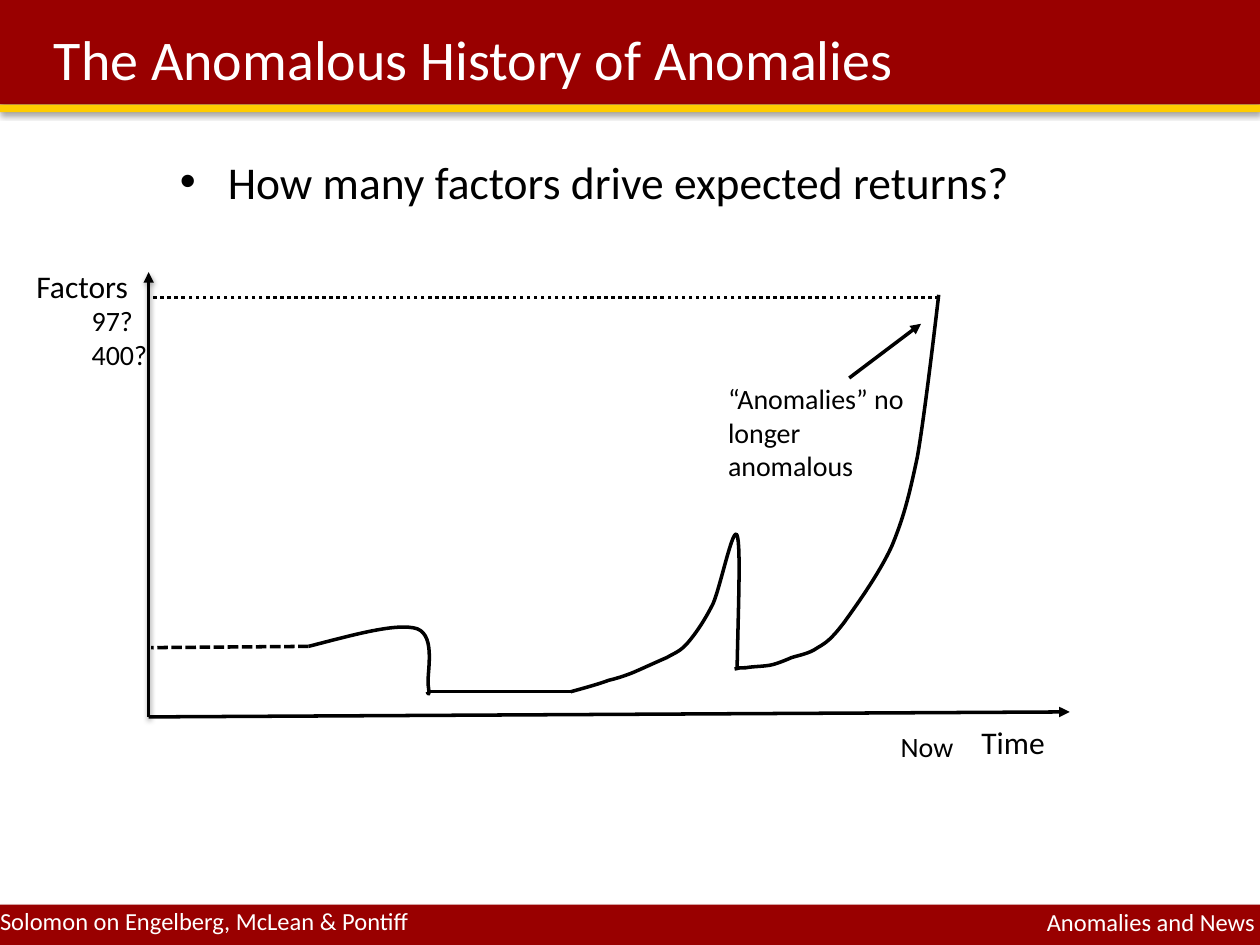
from lxml.etree import SubElement
from pptx import Presentation
from pptx.dml.color import RGBColor
from pptx.enum.dml import MSO_LINE
from pptx.enum.shapes import MSO_CONNECTOR, MSO_SHAPE
from pptx.enum.text import MSO_ANCHOR, PP_ALIGN
from pptx.oxml.ns import qn
from pptx.util import Inches, Pt

COLORS = {"red": "990000", "gold": "FFCC00", "black": "000000", "white": "FFFFFF"}

deck = Presentation()
deck.slide_width = Inches(10)
deck.slide_height = Inches(7.5)
page = deck.slides.add_slide(deck.slide_layouts[6])


def add_text(text, left, top, width, height, size=16, color="black",
             align=PP_ALIGN.LEFT, anchor=MSO_ANCHOR.TOP, inset=None, bullet=False):
    box = page.shapes.add_textbox(Inches(left), Inches(top), Inches(width), Inches(height))
    frame = box.text_frame
    frame.word_wrap = True
    frame.vertical_anchor = anchor
    if inset is not None:
        frame.margin_left = frame.margin_right = Inches(inset)
        frame.margin_top = frame.margin_bottom = Inches(inset)
    para = frame.paragraphs[0]
    para.text = text
    para.alignment = align
    if bullet:
        properties = para._p.get_or_add_pPr()
        properties.set("marL", str(Inches(0.38)))
        properties.set("indent", str(Inches(-0.38)))
        SubElement(properties, qn("a:buFont"), typeface="Arial")
        SubElement(properties, qn("a:buChar"), char="•")
    for span in para.runs:
        span.font.name = "Calibri"
        span.font.size = Pt(size)
        span.font.color.rgb = RGBColor.from_string(COLORS[color])


def set_shadow(shape, opacity=0, distance=0):
    effects = SubElement(shape._element.spPr, qn("a:effectLst"))
    if opacity:
        shadow = SubElement(effects, qn("a:outerShdw"), blurRad=str(Pt(3.1)),
                            dist=str(Pt(distance)), dir="5400000", rotWithShape="0")
        tint = SubElement(shadow, qn("a:srgbClr"), val=COLORS["black"])
        SubElement(tint, qn("a:alpha"), val=str(opacity * 1000))


bands = [
    (7.18, 0.32, "red", 35, 1.8),
    (0, 0.83, "red", 35, 1.8),
    (0.83, 0.06, "gold", 38, 1.6),
]
for top, height, color, opacity, distance in bands:
    band = page.shapes.add_shape(
        MSO_SHAPE.RECTANGLE, 0, Inches(top), deck.slide_width, Inches(height))
    band.fill.solid()
    band.fill.fore_color.rgb = RGBColor.from_string(COLORS[color])
    band.line.fill.background()
    set_shadow(band, opacity, distance)

add_text("Solomon on Engelberg, McLean & Pontiff", 0, 7.19, 3.92, 0.24,
         size=14, color="white", inset=0)
add_text("Anomalies and News", 6.69, 7.2, 3.27, 0.24,
         size=14, color="white", align=PP_ALIGN.RIGHT, inset=0)
add_text("The Anomalous History of Anomalies", 0.33, 0.17, 9, 0.58,
         size=32, color="white", anchor=MSO_ANCHOR.MIDDLE)
add_text("How many factors drive expected returns?", 1.33, 1.17, 8, 5.5,
         size=26, bullet=True)

lines = [
    ((1.18, 5.69), (1.18, 2.16), None, True, 38),
    ((1.18, 5.69), (8.49, 5.65), None, True, 0),
    ((3.39, 5.49), (4.53, 5.49), None, False, 0),
    ((2.45, 5.13), (1.2, 5.14), MSO_LINE.SQUARE_DOT, False, 0),
    ((6.74, 3), (7.31, 2.57), None, True, 0),
    ((7.45, 2.36), (1.18, 2.36), MSO_LINE.ROUND_DOT, False, 0),
]
for start, end, dash, arrow, opacity in lines:
    line = page.shapes.add_connector(
        MSO_CONNECTOR.STRAIGHT, *[Inches(value) for value in start + end])
    line.line.width = Pt(2)
    line.line.color.rgb = RGBColor.from_string(COLORS["black"])
    if dash:
        line.line.dash_style = dash
    if arrow:
        SubElement(line.line._get_or_add_ln(), qn("a:tailEnd"), type="triangle")
    set_shadow(line, opacity, 1.6)

curves = [
    [(2.45, 5.13),
     (2.8, 5.04), (3.15, 4.94), (3.31, 4.99),
     (3.47, 5.05), (3.38, 5.37), (3.4, 5.45),
     (3.41, 5.53), (3.4, 5.51), (3.39, 5.49)],
    [(4.53, 5.49),
     (4.64, 5.46), (4.75, 5.43), (4.83, 5.4),
     (4.91, 5.38), (4.94, 5.37), (5.02, 5.34),
     (5.09, 5.31), (5.22, 5.25), (5.29, 5.22),
     (5.36, 5.18), (5.4, 5.17), (5.46, 5.1),
     (5.52, 5.03), (5.59, 4.93), (5.66, 4.79),
     (5.72, 4.65), (5.82, 4.16), (5.85, 4.25),
     (5.88, 4.33), (5.86, 4.82), (5.85, 5.3)],
    [(5.83, 5.31),
     (5.86, 5.3), (5.88, 5.3), (5.92, 5.3),
     (5.97, 5.29), (6.05, 5.29), (6.11, 5.28),
     (6.17, 5.27), (6.28, 5.22), (6.28, 5.22),
     (6.34, 5.2), (6.42, 5.19), (6.49, 5.14),
     (6.56, 5.1), (6.6, 5.07), (6.7, 4.94),
     (6.8, 4.8), (6.98, 4.55), (7.08, 4.33),
     (7.17, 4.11), (7.21, 3.96), (7.28, 3.63),
     (7.34, 3.3), (7.45, 2.34), (7.45, 2.34)],
]
for knots in curves:
    points = [(Inches(x), Inches(y)) for x, y in knots]
    builder = page.shapes.build_freeform(*points[0])
    builder.add_line_segments(points[3::3], close=False)
    curve = builder.convert_to_shape()
    segments = list(curve._element.iter(qn("a:lnTo")))
    for number, segment in enumerate(segments):
        segment.tag = qn("a:cubicBezTo")
        anchor = segment[0]
        for x, y in points[3 * number + 1:3 * number + 3]:
            handle = SubElement(segment, qn("a:pt"),
                                x=str(x - curve.left), y=str(y - curve.top))
            anchor.addprevious(handle)
    curve.shadow.inherit = False
    curve.fill.background()
    curve.line.width = Pt(2)
    curve.line.color.rgb = RGBColor.from_string(COLORS["black"])

add_text("Factors", 0.19, 2.07, 0.99, 0.4, size=18)
add_text("Time", 7.69, 5.69, 0.99, 0.4, size=18)
add_text("Now", 7.05, 5.74, 1.39, 0.37)
add_text("“Anomalies” no longer anomalous", 5.68, 2.98, 1.63, 1.18)
add_text("97? \v400?", 0.63, 2.36, 1.1, 0.64)

deck.save("out.pptx")
